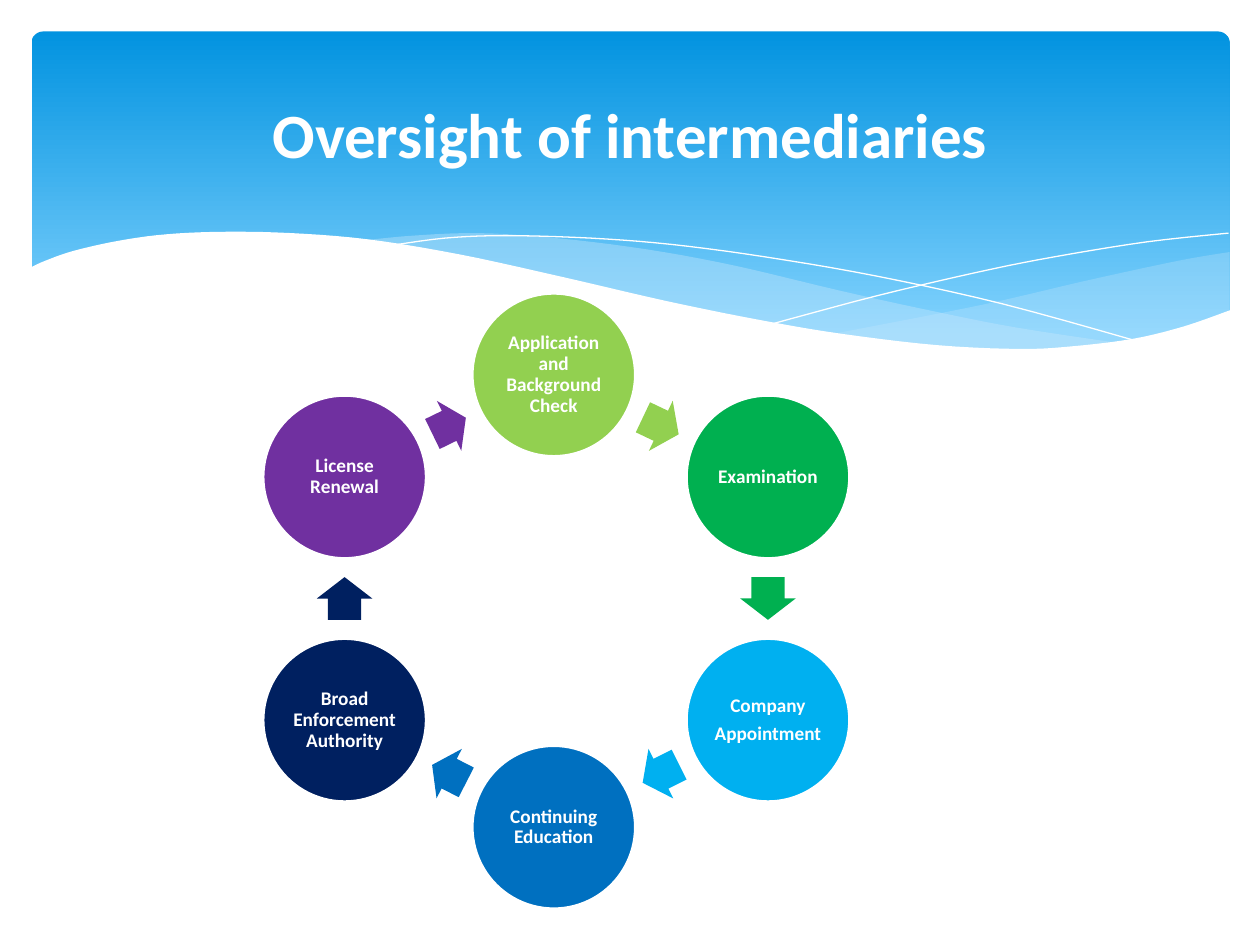
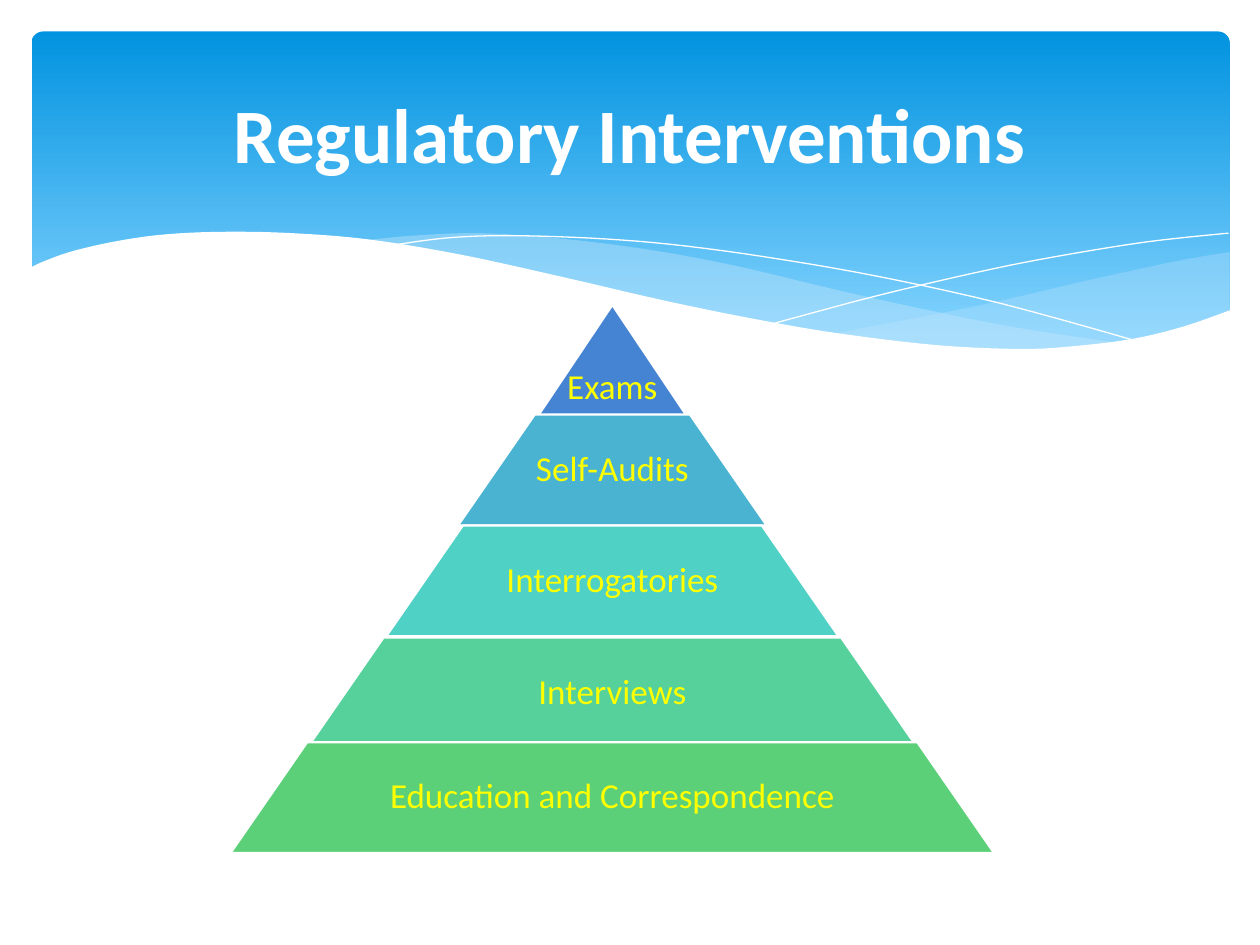
"""Build two insurance oversight slides: a licensing cycle and an intervention pyramid."""
from itertools import pairwise
from math import atan2, degrees, hypot

from lxml import etree
from pptx import Presentation
from pptx.dml.color import RGBColor
from pptx.enum.shapes import MSO_SHAPE
from pptx.enum.text import MSO_ANCHOR, PP_ALIGN
from pptx.oxml.ns import qn
from pptx.util import Pt

ROUNDED, OVAL = MSO_SHAPE.ROUNDED_RECTANGLE, MSO_SHAPE.OVAL
ARROW, TRAPEZOID = MSO_SHAPE.RIGHT_ARROW, MSO_SHAPE.TRAPEZOID
CENTER = PP_ALIGN.CENTER
MIDDLE, BOTTOM = MSO_ANCHOR.MIDDLE, MSO_ANCHOR.BOTTOM

WHITE = RGBColor(0xFF, 0xFF, 0xFF)
YELLOW = RGBColor(0xFF, 0xFF, 0x00)
BAND_TOP = RGBColor(0x02, 0x93, 0xE0)
BAND_BOTTOM = RGBColor(0x83, 0xD3, 0xFE)
WAVE = RGBColor(0xC6, 0xE7, 0xFC)
LIME = RGBColor(0x92, 0xD0, 0x50)
GREEN = RGBColor(0x00, 0xB0, 0x50)
SKY = RGBColor(0x00, 0xB0, 0xF0)
BLUE = RGBColor(0x00, 0x70, 0xC0)
NAVY = RGBColor(0x00, 0x20, 0x60)
PURPLE = RGBColor(0x70, 0x30, 0xA0)
LEVEL_BLUE = RGBColor(0x45, 0x84, 0xD3)
LEVEL_CYAN = RGBColor(0x4B, 0xB3, 0xD2)
LEVEL_TEAL = RGBColor(0x50, 0xD1, 0xC5)
LEVEL_MINT = RGBColor(0x56, 0xD1, 0x9C)
LEVEL_GREEN = RGBColor(0x5B, 0xD0, 0x78)

FONT = "Calibri"
CELL = 91440
COLUMNS, ROWS = 100, 75

RIGHT_WAVE_TOP = [(97.6, 20), (93.5, 20.7), (86.1, 22.3), (77.9, 24.2), (66.1, 26.5)]
RIGHT_WAVE_BOTTOM = [(66.1, 26.5), (71.9, 27.2), (76.9, 27.7), (80.3, 27.8),
                     (85.4, 27.6), (89.7, 27), (93.5, 26.2), (97.6, 24.7)]
LONG_WAVE_TOP = [(28.6, 19.1), (32.8, 18.7), (38, 18.5), (44.2, 18.9), (51.4, 19.8),
                 (58.4, 21.1), (66.8, 23.1), (74.1, 24.7), (80.7, 26), (89.3, 27.3)]
LONG_WAVE_BOTTOM = [(89.3, 27.3), (84.8, 27.7), (79.6, 27.8), (72.2, 27.4), (65, 26.6),
                    (56.6, 24.8), (49.1, 23.2), (44.9, 22.2), (38.3, 20.7),
                    (32.3, 19.6), (28.6, 19.1)]
FALLING_LINE = [(30.9, 19.5), (35.3, 18.9), (40.1, 18.7), (46.9, 18.9), (53.3, 19.4),
                (60.8, 20.4), (69.5, 21.9), (79.5, 24.1), (90.7, 27.2)]
RISING_LINE = [(61.3, 25.7), (69.5, 23.5), (77.6, 21.6), (83.6, 20.4), (91, 19.2),
               (97.5, 18.5)]
PAGE_EDGE = [(97.7, 24.6), (94, 25.9), (89.9, 26.9), (85, 27.5), (80.9, 27.7),
             (74.4, 27.4), (66.8, 26.5), (60.3, 25.4), (52.9, 23.9), (44.7, 22),
             (36.5, 20.2), (29.2, 19), (23, 18.5), (17.7, 18.4), (13.2, 18.6),
             (9.5, 19.1), (5.9, 19.9), (3.6, 20.7), (2.3, 21.3)]

CIRCLE = 12.9
STEPS = [
    (43.95, 29.75, LIME, ["Application and Background Check"]),
    (60.95, 37.85, GREEN, ["Examination"]),
    (60.95, 57.15, SKY, ["Company", "Appointment"]),
    (43.95, 65.65, BLUE, ["Continuing Education"]),
    (27.35, 57.15, NAVY, ["Broad Enforcement Authority"]),
    (27.35, 37.85, PURPLE, ["License Renewal"]),
]

PYRAMID_CENTER, LEVEL_HEIGHT = 48.6, 8.8
LEVELS = [
    (24.2, 11.8, LEVEL_BLUE, "Exams"),
    (32.9, 24.5, LEVEL_CYAN, "Self-Audits"),
    (41.7, 35.9, LEVEL_TEAL, "Interrogatories"),
    (50.6, 48.5, LEVEL_MINT, "Interviews"),
    (58.9, 60.6, LEVEL_GREEN, "Education and Correspondence"),
]


def cells(n):
    return round(n * CELL)


def smooth(points, steps=5):
    """Return a Catmull-Rom curve through the points."""
    ends = [points[0], *points, points[-1]]
    curve = [points[0]]
    for a, b, c, d in zip(ends, ends[1:], ends[2:], ends[3:]):
        for k in range(1, steps + 1):
            t = k / steps
            curve.append(tuple(
                q + (r - p) * t / 2
                + (2 * p - 5 * q + 4 * r - s) * t ** 2 / 2
                + (3 * q - p - 3 * r + s) * t ** 3 / 2
                for p, q, r, s in zip(a, b, c, d)))
    return curve


class Deck:
    """Hold the presentation style and the current slide."""

    def __init__(self):
        self.prs = Presentation()
        self.prs.slide_width = cells(COLUMNS)
        self.prs.slide_height = cells(ROWS)
        self.shapes = None

    def new_slide(self, title, size):
        self.shapes = self.prs.slides.add_slide(self.prs.slide_layouts[6]).shapes
        self.banner()
        box = self.shapes.add_textbox(*map(cells, (5, 3.7, 90, 13.7)))
        self.text(box, [title], size, WHITE, bold=True)

    def banner(self):
        sp = self.shape(ROUNDED, 50.05, 16, 95.1, 27, adjustments=[0.034])
        sp.fill.gradient()
        sp.fill.gradient_angle = 270
        for stop, position, color in zip(
                sp.fill.gradient_stops, (0, 0.9), (BAND_TOP, BAND_BOTTOM)):
            stop.position = position
            stop.color.rgb = color
        self.freeform(smooth(RIGHT_WAVE_TOP) + smooth(RIGHT_WAVE_BOTTOM), WAVE, 29)
        self.freeform(smooth(LONG_WAVE_TOP) + smooth(LONG_WAVE_BOTTOM), WAVE, 40)
        self.freeform(smooth(FALLING_LINE))
        self.freeform(smooth(RISING_LINE))
        self.freeform(smooth(PAGE_EDGE) + [(2.3, 32.9), (97.7, 32.9)], WHITE)

    def style(self, sp, fill=None, line=None):
        sp.shadow.inherit = False
        if fill is None:
            sp.fill.background()
        else:
            sp.fill.solid()
            sp.fill.fore_color.rgb = fill
        if line is None:
            sp.line.fill.background()
        else:
            sp.line.color.rgb = WHITE
            sp.line.width = Pt(line)

    def shape(self, kind, x, y, width, height, fill=None, line=None, adjustments=()):
        sp = self.shapes.add_shape(
            kind, *map(cells, (x - width / 2, y - height / 2, width, height)))
        for i, value in enumerate(adjustments):
            sp.adjustments[i] = value
        self.style(sp, fill, line)
        return sp

    def freeform(self, points, fill=None, opacity=100):
        start, *rest = [(cells(x), cells(y)) for x, y in points]
        builder = self.shapes.build_freeform(*start)
        builder.add_line_segments(rest, close=fill is not None)
        sp = builder.convert_to_shape()
        self.style(sp, fill, 0 if fill is None else None)
        if opacity < 100:
            color = sp._element.spPr.find(".//" + qn("a:srgbClr"))
            etree.SubElement(color, qn("a:alpha"), val=str(opacity * 1000))

    def text(self, sp, lines, size, color, bold=False, inset=None, anchor=MIDDLE,
             spacing=1):
        tf = sp.text_frame
        tf.word_wrap = True
        tf.vertical_anchor = anchor
        if inset is not None:
            tf.margin_left = tf.margin_right = cells(inset)
            tf.margin_top = tf.margin_bottom = cells(inset)
        for i, line in enumerate(lines):
            p = tf.add_paragraph() if i else tf.paragraphs[0]
            p.text = line
            p.alignment = CENTER
            p.line_spacing = spacing
            if i < len(lines) - 1:
                p.space_after = Pt(0.35 * size)
            p.font.name, p.font.size, p.font.bold = FONT, Pt(size), bold
            p.font.color.rgb = color

    def step(self, x, y, color, lines):
        sp = self.shape(OVAL, x, y, CIRCLE, CIRCLE, color, 1.25)
        self.text(sp, lines, 11, WHITE, bold=True, inset=0.2, spacing=0.9)

    def arrow(self, start, end, color):
        (x1, y1), (x2, y2) = start, end
        length = 0.53 * (hypot(x2 - x1, y2 - y1) - CIRCLE)
        sp = self.shape(ARROW, (x1 + x2) / 2, (y1 + y2) / 2, length, 4.4, color,
                        adjustments=[0.6, 0.5])
        sp.rotation = degrees(atan2(y2 - y1, x2 - x1))

    def level(self, top, width, color, label, is_tip):
        self.shape(TRAPEZOID, PYRAMID_CENTER, top + LEVEL_HEIGHT / 2, width,
                   LEVEL_HEIGHT, color, 1.25, [0.692])
        text_width = width * (1 if is_tip else 0.65)
        box = self.shapes.add_textbox(*map(cells, (
            PYRAMID_CENTER - text_width / 2, top, text_width, LEVEL_HEIGHT)))
        self.text(box, [label], 20, YELLOW, inset=0.7 if is_tip else 0.3,
                  anchor=BOTTOM if is_tip else MIDDLE, spacing=0.9)


def main():
    deck = Deck()
    deck.new_slide("Oversight of intermediaries", 36)
    for step in STEPS:
        deck.step(*step)
    for here, following in pairwise(STEPS + STEPS[:1]):
        deck.arrow(here[:2], following[:2], here[2])

    deck.new_slide("Regulatory Interventions", 44)
    for i, level in enumerate(LEVELS):
        deck.level(*level, is_tip=i == 0)
    deck.prs.save("out.pptx")


if __name__ == "__main__":
    main()
